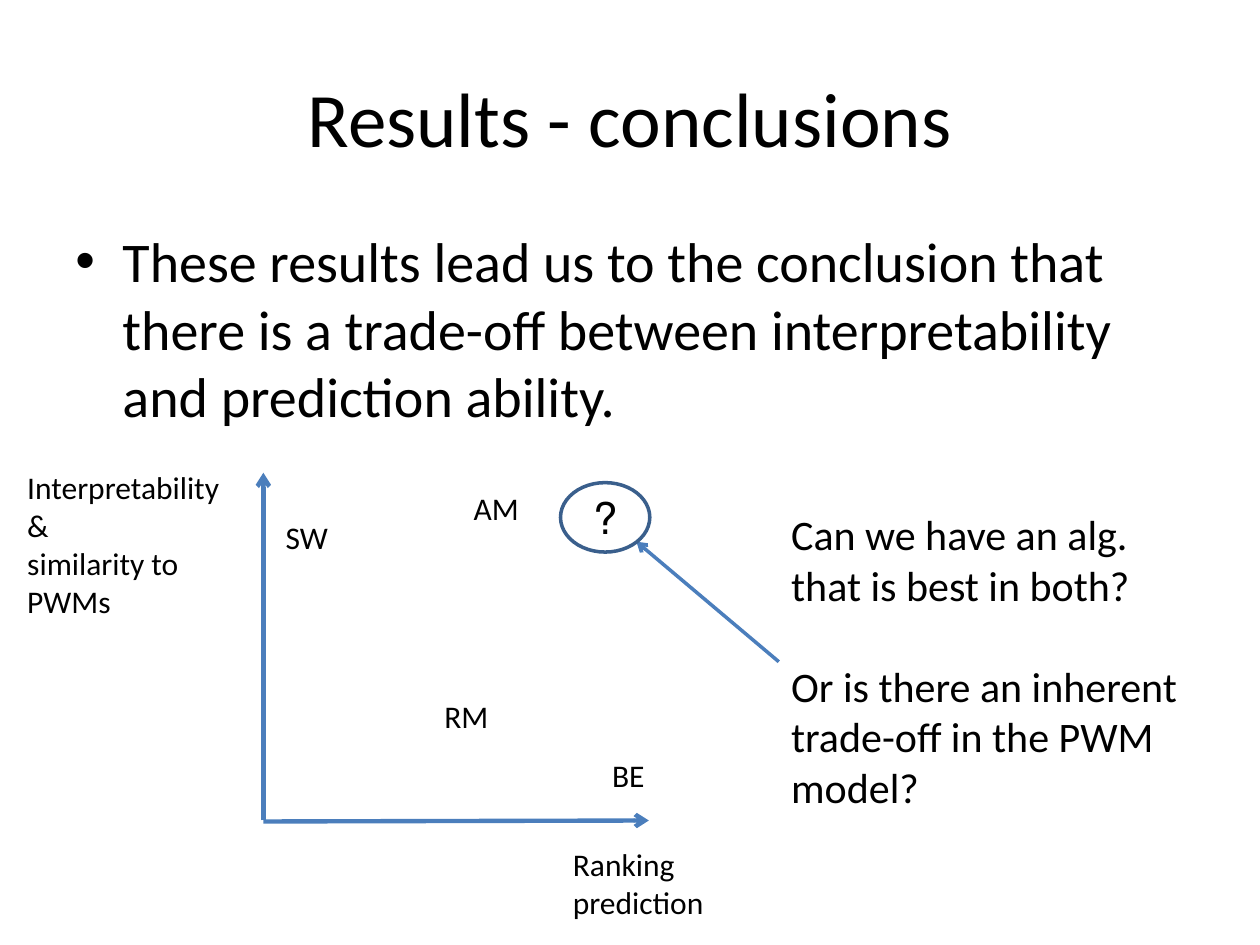
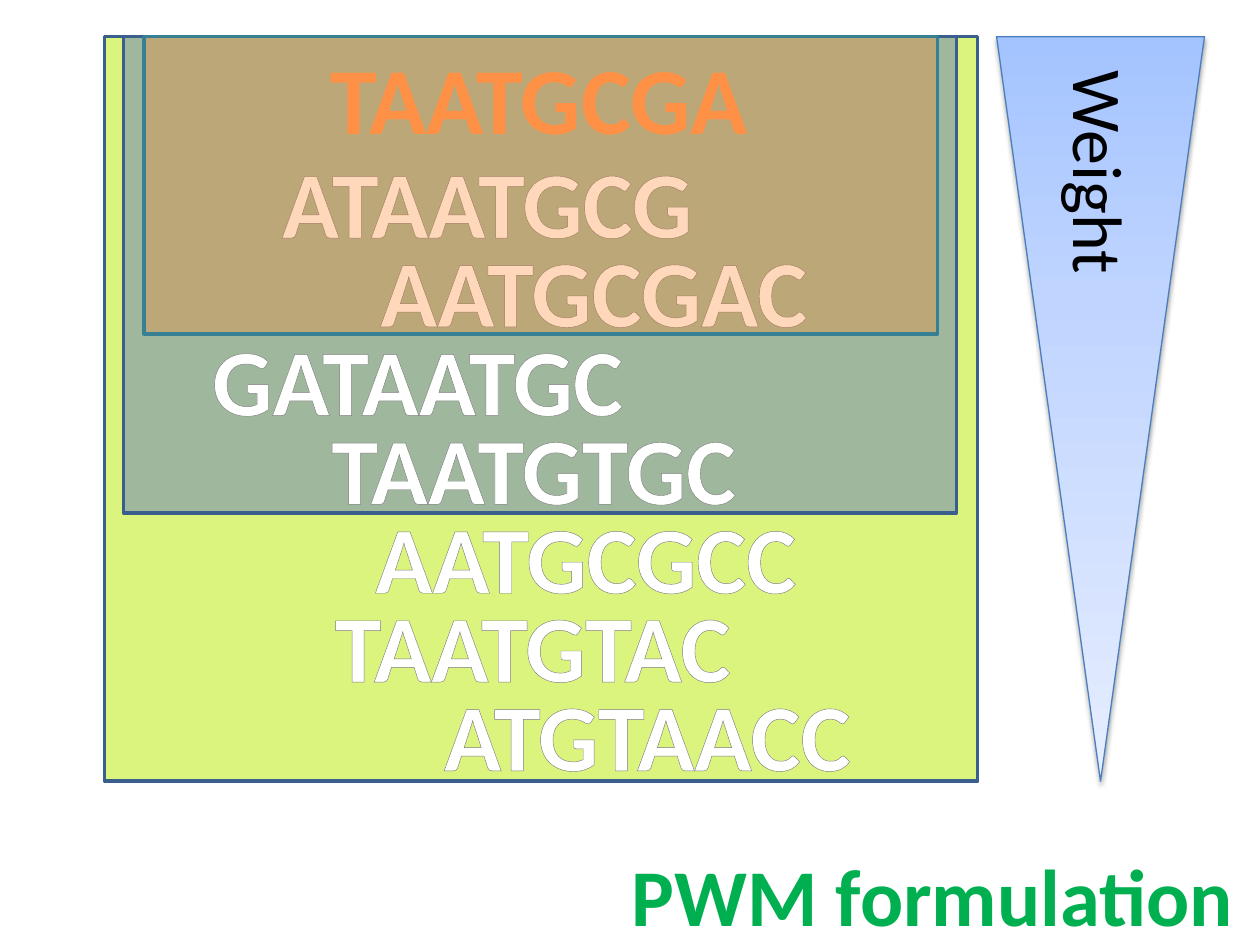
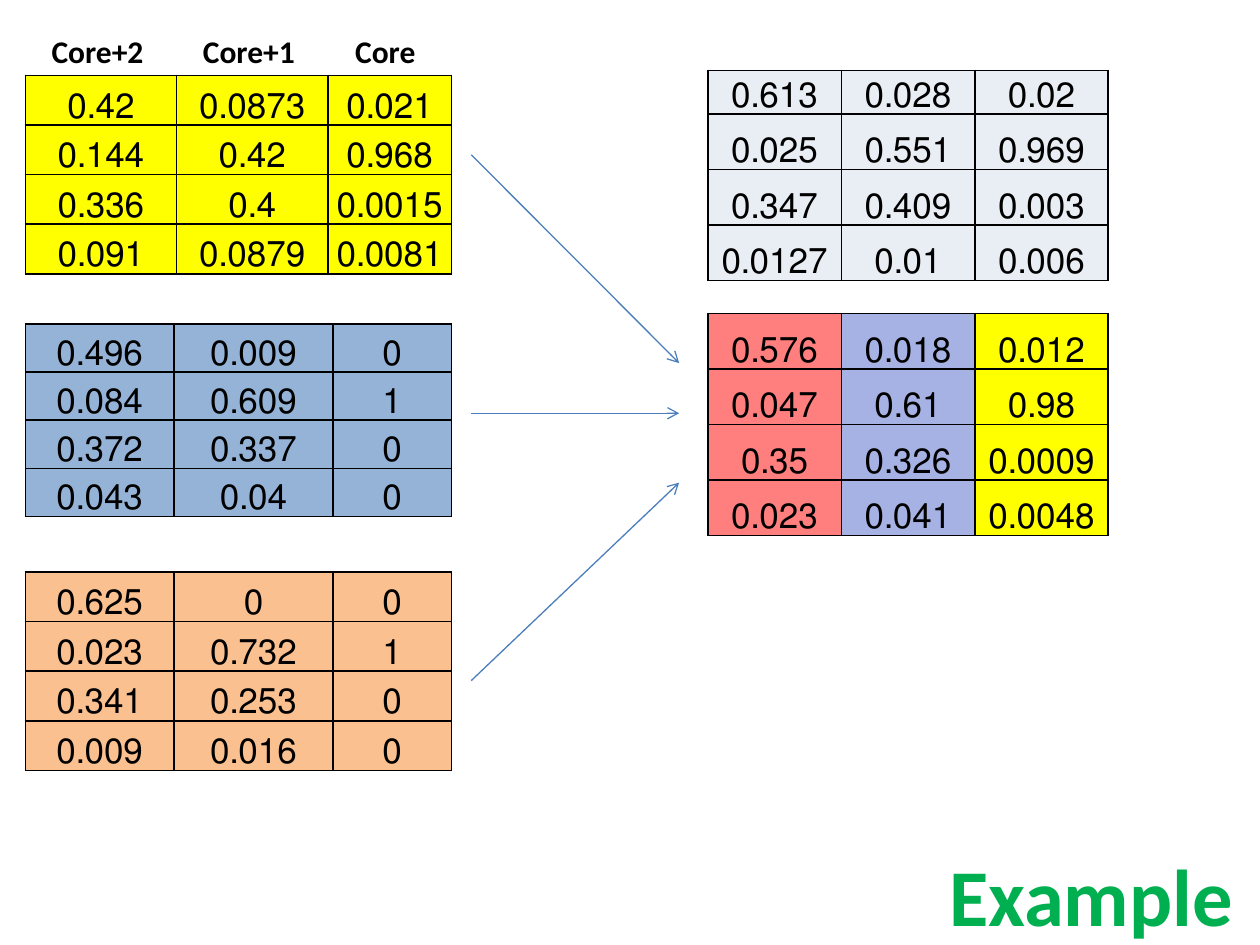
from lxml.etree import SubElement
from pptx import Presentation
from pptx.dml.color import RGBColor
from pptx.enum.shapes import MSO_CONNECTOR, MSO_SHAPE
from pptx.enum.text import MSO_ANCHOR, PP_ALIGN
from pptx.oxml import parse_xml
from pptx.oxml.ns import nsdecls, qn
from pptx.util import Cm, Pt

FONT = "Calibri"
COLORS = {
    "text": "000000",
    "heading": "00B050",
    "arrow": "4B7EBC",
    "outline": "3A5F8C",
    "outer": "C3ED29",
    "middle": "4E67C8",
    "core": "FF8021",
    "core_edge": "377F92",
    "core_text": "FF9147",
    "letter": "FFFFFF",
    "letter_shade": "7F7F7F",
    "letter_edge": "7D7D7D",
    "weight_dark": "A4C4FF",
    "weight_mid": "BFD4FF",
    "weight_light": "E6EEFF",
    "yellow": "FFFF00",
    "blue": "95B3D7",
    "orange": "FAC090",
    "red": "FF0000",
    "pale": "E9EDF4",
}


def rgb(name):
    """Return the named colour."""
    return RGBColor.from_string(COLORS[name])


def gradient(stops, angle):
    """Return a linear gradient fill from (percent, colour name) stops."""
    marks = "".join(
        f'<a:gs pos="{percent * 1000}"><a:srgbClr val="{COLORS[name]}"/></a:gs>'
        for percent, name in stops
    )
    return parse_xml(
        f'<a:gradFill rotWithShape="1" {nsdecls("a")}><a:gsLst>{marks}</a:gsLst>'
        f'<a:lin ang="{angle * 60000}" scaled="0"/></a:gradFill>'
    )


def paint(fill, holder, color, opacity=100):
    """Fill solidly, with the given opacity in percent."""
    fill.solid()
    fill.fore_color.rgb = rgb(color)
    if opacity < 100:
        tint = holder.find(qn("a:solidFill")).find(qn("a:srgbClr"))
        SubElement(tint, qn("a:alpha")).set("val", str(opacity * 1000))


def add_run(paragraph, words, size, color="text", bold=False):
    """Add one styled run and return it."""
    run = paragraph.add_run()
    run.text = words
    run.font.name = FONT
    run.font.size = Pt(size)
    run.font.bold = bold
    if color:
        run.font.color.rgb = rgb(color)
    return run


def right_to_left(paragraph):
    """Set the reading direction to right to left."""
    paragraph._p.get_or_add_pPr().set("rtl", "1")


def add_text(slide, box, lines, size, color="text", bold=False,
             align=PP_ALIGN.LEFT, wrap=True, gap=0):
    """Add a text box with one paragraph per line."""
    label = slide.shapes.add_textbox(*map(Cm, box))
    frame = label.text_frame
    frame.word_wrap = wrap
    for index, words in enumerate(lines):
        paragraph = frame.add_paragraph() if index else frame.paragraphs[0]
        paragraph.alignment = align
        if index and gap:
            paragraph.space_before = Pt(gap)
        add_run(paragraph, words, size, color, bold)
    return label


def add_arrow(slide, start, end, width):
    """Add a straight line with an open head at its end."""
    arrow = slide.shapes.add_connector(
        MSO_CONNECTOR.STRAIGHT, *map(Cm, start + end))
    arrow.line.color.rgb = rgb("arrow")
    arrow.line.width = Pt(width)
    properties = arrow._element.spPr
    SubElement(properties.find(qn("a:ln")), qn("a:tailEnd")).set("type", "arrow")
    SubElement(properties, qn("a:effectLst"))


def add_outlined(slide, kind, box, edge, width=2, fill=None, opacity=100):
    """Add a preset shape with an outline and an optional fill."""
    shape = slide.shapes.add_shape(kind, *map(Cm, box))
    shape.shadow.inherit = False
    shape.line.color.rgb = rgb(edge)
    shape.line.width = Pt(width)
    if fill:
        paint(shape.fill, shape._element.spPr, fill, opacity)
    else:
        shape.fill.background()
    return shape


def add_heading(slide, words):
    """Add the green heading at the lower right."""
    add_text(slide, (11.51, 16.94, 13.59, 2.57), [words], 46, "heading", True,
             PP_ALIGN.RIGHT)


def add_sequence(slide, words, center, top, color=None):
    """Add a DNA sequence, with outlined letters unless a colour is given."""
    width = 10
    label = add_text(slide, (center - width / 2, top, width, 2.57), [words], 54,
                     color, True, PP_ALIGN.CENTER, False)
    if not color:
        properties = label.text_frame.paragraphs[0].runs[0].font._element
        properties.insert(0, parse_xml(
            f'<a:ln w="{Pt(0.83)}" {nsdecls("a")}><a:solidFill>'
            f'<a:srgbClr val="{COLORS["letter_edge"]}"/></a:solidFill></a:ln>'))
        properties.insert(1, gradient(
            [(0, "letter"), (9, "letter"), (50, "letter_shade"),
             (79, "letter"), (100, "letter")], 90))


def add_borders(cell):
    """Draw thin lines on all sides of a cell."""
    properties = cell._tc.get_or_add_tcPr()
    for index, side in enumerate(("lnL", "lnR", "lnT", "lnB")):
        properties.insert(index, parse_xml(
            f'<a:{side} w="{Pt(1)}" {nsdecls("a")}><a:solidFill>'
            f'<a:srgbClr val="{COLORS["text"]}"/></a:solidFill></a:{side}>'))


def add_matrix(slide, corner, widths, heights, fills, values):
    """Add a weight matrix with one (colour, opacity) fill per column."""
    size = (sum(widths), sum(heights))
    matrix = slide.shapes.add_table(
        len(heights), len(widths), *map(Cm, corner + size)).table
    matrix.first_row = False
    matrix.horz_banding = False
    for column, width in zip(matrix.columns, widths):
        column.width = Cm(width)
    for row, height, line in zip(matrix.rows, heights, values):
        row.height = Cm(height)
        for cell, (color, opacity), value in zip(row.cells, fills, line.split()):
            cell.margin_left = cell.margin_right = cell.margin_top = Cm(0.03)
            cell.margin_bottom = 0
            cell.vertical_anchor = MSO_ANCHOR.BOTTOM
            paint(cell.fill, cell._tc.get_or_add_tcPr(), color, opacity)
            add_borders(cell)
            paragraph = cell.text_frame.paragraphs[0]
            paragraph.alignment = PP_ALIGN.CENTER
            right_to_left(paragraph)
            add_run(paragraph, value, 20)


def add_bullet(slide, box, words, size):
    """Add a bulleted statement with a hanging indent."""
    statement = add_text(slide, box, [words], size)
    paragraph = statement.text_frame.paragraphs[0]
    paragraph.space_before = Pt(size * 0.2)
    properties = paragraph._p.get_or_add_pPr()
    properties.set("marL", str(Cm(0.95)))
    properties.set("indent", str(-Cm(0.95)))
    SubElement(properties, qn("a:buFont")).set("typeface", "Arial")
    SubElement(properties, qn("a:buChar")).set("char", "•")


def build_conclusions(slide):
    """Build the trade-off slide."""
    title = add_text(slide, (1.27, 0.76, 22.86, 3.18), ["Results - conclusions"],
                     44, align=PP_ALIGN.CENTER)
    title.text_frame.vertical_anchor = MSO_ANCHOR.MIDDLE
    add_bullet(slide, (1.27, 4.45, 22.86, 12.57),
               "These results lead us to the conclusion that there is a trade-off "
               "between interpretability and prediction ability.", 32)
    add_arrow(slide, (5.31, 16.54), (5.31, 9.53), 2.5)
    add_arrow(slide, (5.31, 16.56), (13.08, 16.54), 2.5)
    add_text(slide, (0.3, 9.32, 4.39, 3.33),
             ["Interpretability", "&", "similarity to PWMs"], 18)
    add_text(slide, (11.3, 16.92, 4.39, 1.8), ["Ranking prediction"], 18)
    for algorithm, left, top in (("BE", 12.09, 15.11), ("RM", 8.71, 13.92),
                                 ("AM", 9.3, 9.73), ("SW", 5.51, 10.31)):
        add_text(slide, (left, top, 1.6, 1.02), [algorithm], 18)
    add_text(slide, (15.7, 10.13, 8.61, 6.4),
             ["Can we have an alg. that is best in both?",
              "Or is there an inherent trade-off in the PWM model?"], 24, gap=29)
    add_arrow(slide, (15.7, 13.34), (12.83, 10.92), 2)
    unknown = add_outlined(slide, MSO_SHAPE.OVAL, (11.3, 9.73, 1.8, 1.4), "outline")
    unknown.text_frame.vertical_anchor = MSO_ANCHOR.MIDDLE
    question = unknown.text_frame.paragraphs[0]
    question.alignment = PP_ALIGN.CENTER
    right_to_left(question)
    add_run(question, "?", 25)


def build_formulation(slide):
    """Build the nested sequence groups and their weight scale."""
    process = MSO_SHAPE.FLOWCHART_PROCESS
    top, height = 0.74, 15.01
    add_outlined(slide, process, (2.11, top, 17.6, height), "outline",
                 fill="outer", opacity=60)
    add_outlined(slide, process, (2.49, top, 16.79, 9.6), "outline",
                 fill="middle", opacity=42)
    add_heading(slide, "PWM formulation")
    sequences = (("ATAATGCG", 9.82), ("AATGCGAC", 11.97), ("GATAATGC", 8.42),
                 ("TAATGTGC", 10.76), ("AATGCGCC", 11.81), ("TAATGTAC", 10.74),
                 ("ATGTAACC", 13.05))
    for index, (words, center) in enumerate(sequences):
        add_sequence(slide, words, center, 2.77 + 1.79 * index)
    add_outlined(slide, process, (2.9, top, 16, 5.99), "core_edge",
                 fill="core", opacity=30)
    add_sequence(slide, "TAATGCGA", 10.87, 0.69, "core_text")

    scale = add_outlined(slide, MSO_SHAPE.ISOSCELES_TRIANGLE,
                         (20.09, top, 4.19, height), "arrow", 0.75)
    scale.rotation = 180
    properties = scale._element.spPr
    properties.replace(properties.find(qn("a:noFill")), gradient(
        [(0, "weight_dark"), (35, "weight_mid"), (100, "weight_light")], 270))
    properties.find(qn("a:effectLst")).append(parse_xml(
        f'<a:outerShdw blurRad="{Pt(3.1)}" dist="{Pt(1.6)}" dir="5400000" '
        f'rotWithShape="0" {nsdecls("a")}><a:srgbClr val="{COLORS["text"]}">'
        '<a:alpha val="38000"/></a:srgbClr></a:outerShdw>'))
    add_text(slide, (19.66, 2.74, 5.08, 1.96), ["Weight"], 40).rotation = 90


def build_example(slide):
    """Build the worked example of matrices that are merged."""
    add_heading(slide, "Example")
    left, right = 0.51, 14.27
    yellow = ("yellow", 100)
    add_matrix(slide, (left, 1.52), (3.05, 3.05, 2.49), [1] * 4, [yellow] * 3,
               ("0.42 0.0873 0.021", "0.144 0.42 0.968",
                "0.336 0.4 0.0015", "0.091 0.0879 0.0081"))
    add_matrix(slide, (left, 6.53), (3, 3.2, 2.39), [0.97] * 4, [("blue", 100)] * 3,
               ("0.496 0.009 0", "0.084 0.609 1", "0.372 0.337 0", "0.043 0.04 0"))
    add_matrix(slide, (left, 11.53), (3, 3.2, 2.39), [1] * 4, [("orange", 100)] * 3,
               ("0.625 0 0", "0.023 0.732 1", "0.341 0.253 0", "0.009 0.016 0"))
    add_matrix(slide, (right, 6.32), [2.69] * 3, [1.12] * 4,
               [("red", 50), ("middle", 50), yellow],
               ("0.576 0.018 0.012", "0.047 0.61 0.98",
                "0.35 0.326 0.0009", "0.023 0.041 0.0048"))
    add_matrix(slide, (right, 1.42), [2.69] * 3, [0.13] + [1.12] * 3,
               [("pale", 100)] * 3,
               ("0.613 0.028 0.02", "0.025 0.551 0.969",
                "0.347 0.409 0.003", "0.0127 0.01 0.006"))
    for region, start, width in (("Core", 6.91, 1.9), ("Core+1", 3.84, 2.67),
                                 ("Core+2", 0.79, 2.67)):
        add_text(slide, (start, 0.53, width, 1.02), [region], 18, bold=True,
                 wrap=False)
    for source, target in ((3.12, 7.32), (8.33, 8.33), (13.72, 9.73)):
        add_arrow(slide, (9.5, source), (13.69, target), 0.75)


def main():
    """Build and save the presentation."""
    deck = Presentation()
    deck.slide_width, deck.slide_height = Cm(25.4), Cm(19.05)
    for build in (build_conclusions, build_formulation, build_example):
        build(deck.slides.add_slide(deck.slide_layouts[6]))
    deck.save("out.pptx")


if __name__ == "__main__":
    main()
